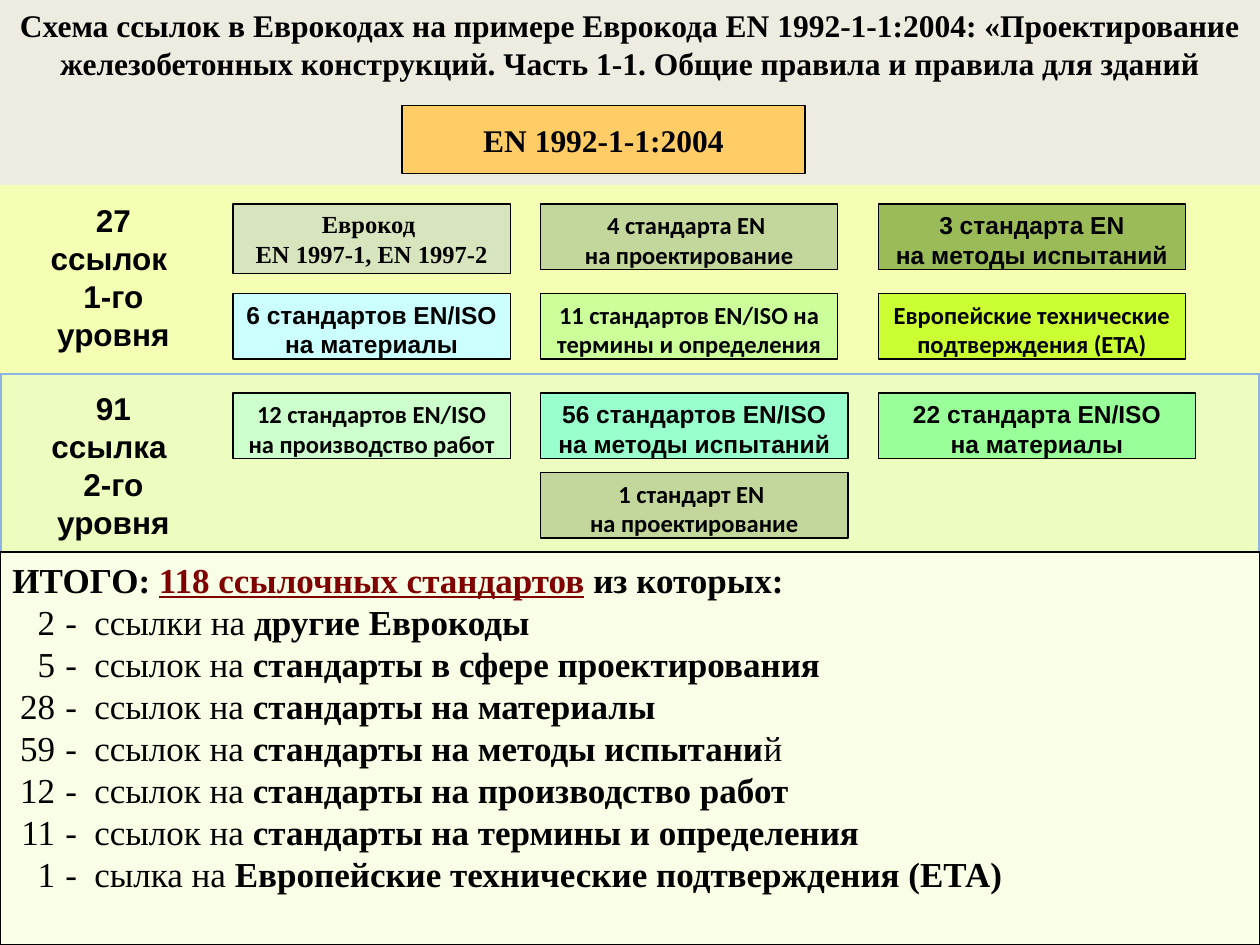
from lxml.etree import SubElement
from pptx import Presentation
from pptx.dml.color import RGBColor
from pptx.enum.shapes import MSO_SHAPE as SHAPE
from pptx.enum.text import MSO_ANCHOR as ANCHOR, PP_ALIGN as ALIGN
from pptx.oxml.ns import qn
from pptx.util import Inches, Pt

SERIF, SANS, CALIBRI = "Times New Roman", "Arial", "Calibri"
COLUMNS = (1.85, 4.29, 6.97)
ROWS = (1.62, 2.33, 3.12, 3.75)
BOX_HEIGHT = 0.52

BANDS = [
    (2.96, 1.47, "EDFDBF", "8EB4E3", 2),
    (0, 1.47, "EEECE1", None, 0),
    (1.47, 1.49, "F4FFB3", None, 0),
]

STANDARDS = [
    (0, 0, 2.2, "D7E4BD", SERIF, "Еврокод \vEN 1997-1, EN 1997-2"),
    (0, 1, 2.36, "C3D69B", CALIBRI, "4 стандарта EN \vна проектирование"),
    (0, 2, 2.44, "9BBB59", SANS, "3 стандарта EN\nна методы испытаний"),
    (1, 0, 2.2, "CCFFFF", SANS, "6 стандартов EN/ISO\nна материалы"),
    (1, 1, 2.36, "CCFF99", CALIBRI, "11 стандартов EN/ISO на термины и определения"),
    (1, 2, 2.44, "CCFF33", CALIBRI, "Европейские технические подтверждения (ETA)"),
    (2, 0, 2.2, "CCFFCC", CALIBRI, "12 стандартов EN/ISO на производство работ"),
    (2, 1, 2.44, "99FFCC", SANS, "56 стандартов EN/ISO\nна методы испытаний"),
    (2, 2, 2.52, "99FF99", SANS, "22 стандарта EN/ISO\nна материалы"),
    (3, 1, 2.44, "C3D69B", CALIBRI, "1 стандарт EN \vна проектирование"),
]

LEVELS = [(1.55, "27 ссылок \v1-го уровня"), (3.04, "91 ссылка \v2-го уровня")]

TOTALS = [
    (2, "ссылки на ", "другие Еврокоды", ""),
    (5, "ссылок на ", "стандарты в сфере проектирования", ""),
    (28, "ссылок на ", "стандарты на материалы", ""),
    (59, "ссылок на ", "стандарты на методы испытани", "й"),
    (12, "ссылок на ", "стандарты на производство работ", ""),
    (11, "ссылок на ", "стандарты на термины и определения", ""),
    (1, "сылка на ", "Европейские технические подтверждения (ЕТА)", ""),
]


def rgb(value):
    """Turn a hex string into a colour."""
    return RGBColor.from_string(value)


def style(font, name, size, bold=True):
    """Set the black font of a paragraph."""
    font.name, font.size, font.bold = name, Pt(size), bold
    font.color.rgb = rgb("000000")


def write(sp, text, name, size, anchor=ANCHOR.TOP):
    """Fill a shape with centred bold text."""
    tf = sp.text_frame
    tf.word_wrap = True
    tf.vertical_anchor = anchor
    tf.text = text
    for p in tf.paragraphs:
        p.alignment = ALIGN.CENTER
        style(p.font, name, size)


def add_box(slide, left, top, width, height, fill, line="000000", weight=0.75):
    """Add a flat rectangle, outlined when a line colour is given."""
    sp = slide.shapes.add_shape(
        SHAPE.RECTANGLE, Inches(left), Inches(top), Inches(width), Inches(height))
    sp.shadow.inherit = False
    sp.fill.solid()
    sp.fill.fore_color.rgb = rgb(fill)
    if line:
        sp.line.color.rgb = rgb(line)
        sp.line.width = Pt(weight)
    else:
        sp.line.fill.background()
    return sp


def add_label(slide, left, top, width, height, text, name):
    """Add a centred 18-point text box."""
    sp = slide.shapes.add_textbox(
        Inches(left), Inches(top), Inches(width), Inches(height))
    write(sp, text, name, 18)


def add_run(p, text, bold):
    """Append a run and return it."""
    r = p.add_run()
    r.text = text
    r.font.bold = bold
    return r


def set_tabs(p, stops):
    """Give a paragraph its tab stops."""
    tabs = SubElement(p._p.get_or_add_pPr(), qn("a:tabLst"))
    for position, align in stops:
        SubElement(tabs, qn("a:tab"), pos=str(Inches(position)), algn=align)


def add_totals(slide):
    """Add the summary panel with its counted list."""
    tf = add_box(slide, 0, 4.38, 10, 3.12, "F9FEE6").text_frame
    tf.word_wrap = True
    tf.vertical_anchor = ANCHOR.TOP
    p = tf.paragraphs[0]
    p.alignment = ALIGN.LEFT
    style(p.font, SERIF, 20)
    add_run(p, "ИТОГО: ", True)
    r = add_run(p, "118 ссылочных стандартов", True)
    r.font.color.rgb = rgb("800000")
    r.font.underline = True
    add_run(p, " из которых:", True)
    for count, lead, subject, ending in TOTALS:
        p = tf.add_paragraph()
        p.alignment = ALIGN.LEFT
        set_tabs(p, [(0.34, "r"), (0.42, "l"), (0.65, "l")])
        style(p.font, SERIF, 20, False)
        add_run(p, f"\t{count}\t-\t{lead}", False)
        add_run(p, subject, True)
        if ending:
            add_run(p, ending, False)


def main():
    """Build the slide and save it."""
    prs = Presentation()
    prs.slide_width, prs.slide_height = Inches(10), Inches(7.5)
    slide = prs.slides.add_slide(prs.slide_layouts[6])
    slide.background.fill.solid()
    slide.background.fill.fore_color.rgb = rgb("EBF1DE")
    for top, height, fill, line, weight in BANDS:
        add_box(slide, 0, top, 10, height, fill, line, weight)
    add_label(slide, 0, 0, 10, 0.71,
              "Схема ссылок в Еврокодах на примере Еврокода EN 1992-1-1:2004: "
              "«Проектирование железобетонных конструкций. Часть 1-1. "
              "Общие правила и правила для зданий", SERIF)
    write(add_box(slide, 3.19, 0.84, 3.2, 0.54, "FFCC66"),
          "EN 1992-1-1:2004", SERIF, 18, ANCHOR.MIDDLE)
    for row, column, width, fill, name, text in STANDARDS:
        height, anchor = (0.55, ANCHOR.MIDDLE) if name == SERIF else (BOX_HEIGHT, ANCHOR.TOP)
        sp = add_box(slide, COLUMNS[column], ROWS[row], width, height, fill)
        write(sp, text, name, 14, anchor)
    for top, text in LEVELS:
        add_label(slide, 0.27, top, 1.26, 1.34, text, SANS)
    add_totals(slide)
    prs.save("out.pptx")


if __name__ == "__main__":
    main()
